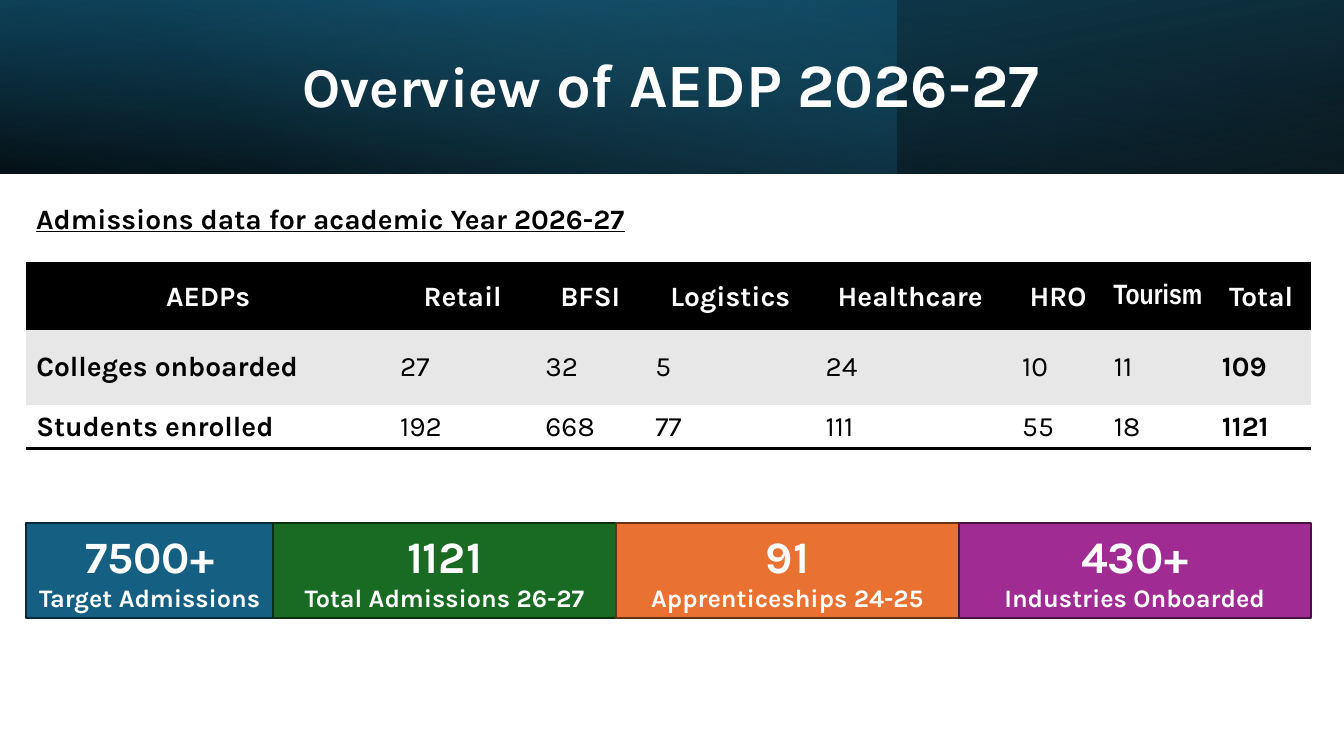
from dataclasses import dataclass, field
from itertools import accumulate

from pptx import Presentation
from pptx.dml.color import RGBColor
from pptx.enum.shapes import MSO_SHAPE
from pptx.enum.text import MSO_ANCHOR, MSO_AUTO_SIZE, PP_ALIGN
from pptx.oxml import parse_xml
from pptx.oxml.ns import nsdecls, qn
from pptx.util import Inches, Pt


@dataclass(frozen=True)
class Theme:
    """Fonts, colours and type sizes of the slide."""

    font: str = "Karla"
    narrow_font: str = "Arial Narrow"
    black: str = "000000"
    white: str = "FFFFFF"
    stripe: str = "E7E7E7"
    title_size: int = 44
    title_lead_size: int = 40
    figure_size: int = 32
    body_size: int = 20
    caption_size: int = 18
    plain_table: str = "{2D5ABB26-0587-4C30-8999-92F81FD0307C}"


@dataclass
class SlideBuilder:
    """Draws styled elements on a page, with lengths in percent of its size."""

    page: object
    width: int
    height: int
    theme: Theme = field(default_factory=Theme)

    def area(self, left, top, width, height):
        """Turn percentages into a left, top, width, height tuple."""
        sides = (self.width, self.height, self.width, self.height)
        return [round(side * share / 100) for side, share in zip(sides, (left, top, width, height))]

    def style(self, span, size, color, bold=True, font=None):
        """Format one run."""
        span.font.name = font or self.theme.font
        span.font.size = Pt(size)
        span.font.bold = bold
        span.font.color.rgb = RGBColor.from_string(color)

    def rectangle(self, area):
        """Add a rectangle without shadow."""
        box = self.page.shapes.add_shape(MSO_SHAPE.RECTANGLE, *self.area(*area))
        box.shadow.inherit = False
        return box

    def gradient(self, area, stops, angle, rotation=0, flip=False):
        """Add a rectangle with a translucent linear gradient."""
        box = self.rectangle(area)
        box.rotation = rotation
        if flip:
            box.element.spPr.find(qn("a:xfrm")).set("flipH", "1")
        box.line.fill.background()
        box.fill.background()
        marks = "".join(
            f'<a:gs pos="{place * 1000}"><a:srgbClr val="{color}">'
            f'<a:alpha val="{opacity * 1000}"/></a:srgbClr></a:gs>'
            for place, color, opacity in stops
        )
        fill = parse_xml(
            f'<a:gradFill {nsdecls("a")} rotWithShape="1"><a:gsLst>{marks}</a:gsLst>'
            f'<a:lin ang="{angle * 60000}" scaled="0"/></a:gradFill>'
        )
        properties = box.element.spPr
        properties.replace(properties.find(qn("a:noFill")), fill)

    def title(self, area, lead, rest):
        """Move the title in front of the banner and format it."""
        box = self.page.shapes.title
        self.page.shapes[-1].element.addnext(box.element)
        box.left, box.top, box.width, box.height = self.area(*area)
        frame = box.text_frame
        frame.text = lead
        frame.word_wrap = True
        frame.auto_size = MSO_AUTO_SIZE.NONE
        frame.vertical_anchor = MSO_ANCHOR.MIDDLE
        para = frame.paragraphs[0]
        para.add_run().text = rest
        para.alignment = PP_ALIGN.CENTER
        para.line_spacing = 0.9
        para.space_after = Pt(6)
        for span, size in zip(para.runs, (self.theme.title_lead_size, self.theme.title_size)):
            self.style(span, size, self.theme.white)

    def heading(self, area, text):
        """Add an underlined heading."""
        frame = self.page.shapes.add_textbox(*self.area(*area)).text_frame
        frame.text = text
        frame.word_wrap = True
        span = frame.paragraphs[0].runs[0]
        self.style(span, self.theme.body_size, self.theme.black)
        span.font.underline = True

    def border(self, cell, side):
        """Draw one black edge of a cell."""
        cell.fill._xPr.insert(0, parse_xml(
            f'<a:{side} {nsdecls("a")} w="{Pt(2)}"><a:solidFill>'
            f'<a:srgbClr val="{self.theme.black}"/></a:solidFill></a:{side}>'
        ))

    def table(self, area, weights, heights, rows, narrow):
        """Add a table with a black header and a striped body."""
        theme = self.theme
        frame = self.page.shapes.add_table(len(rows), len(weights), *self.area(*area))
        table = frame.table
        table.horz_banding = False
        next(frame.element.iter(qn("a:tableStyleId"))).text = theme.plain_table
        total_width, total_height = frame.width, frame.height
        for column, weight in zip(table.columns, weights):
            column.width = round(total_width * weight / sum(weights))
        for row, weight in zip(table.rows, heights):
            row.height = round(total_height * weight / sum(heights))
        fills = (theme.black, theme.stripe, theme.white)
        for y, values in enumerate(rows):
            for x, value in enumerate(values):
                cell = table.cell(y, x)
                cell.text = value
                cell.vertical_anchor = MSO_ANCHOR.MIDDLE
                cell.fill.solid()
                cell.fill.fore_color.rgb = RGBColor.from_string(fills[y])
                para = cell.text_frame.paragraphs[0]
                bold = y == 0 or x in (0, len(values) - 1)
                font = theme.narrow_font if value == narrow else theme.font
                color = theme.white if y == 0 else theme.black
                self.style(para.runs[0], theme.body_size, color, bold, font)
                if y == 0:
                    para.alignment = PP_ALIGN.CENTER
                    cell.margin_left = cell.margin_right = cell.margin_top = Inches(0.01)
                    cell.margin_bottom = 0
                    self.border(cell, "lnT")
                elif y == len(rows) - 1:
                    self.border(cell, "lnB")

    def tile(self, area, figure, caption, fill, line):
        """Add a coloured tile with a figure above its caption."""
        box = self.rectangle(area)
        box.fill.solid()
        box.fill.fore_color.rgb = RGBColor.from_string(fill)
        box.line.color.rgb = RGBColor.from_string(line)
        box.line.width = Pt(1.5)
        frame = box.text_frame
        frame.text = f"{figure}\v{caption}"
        frame.word_wrap = True
        frame.auto_size = MSO_AUTO_SIZE.SHAPE_TO_FIT_TEXT
        para = frame.paragraphs[0]
        para.alignment = PP_ALIGN.CENTER
        for span, size in zip(para.runs, (self.theme.figure_size, self.theme.caption_size)):
            self.style(span, size, self.theme.white)

    def tiles(self, left, top, width, height, weights, entries):
        """Lay tiles side by side in proportion to their weights."""
        unit = width / sum(weights)
        for start, weight, entry in zip(accumulate(weights, initial=0), weights, entries):
            self.tile((left + start * unit, top, weight * unit, height), *entry)


def main():
    """Build and save the slide."""
    deck = Presentation()
    deck.slide_width, deck.slide_height = Inches(13.33), Inches(7.5)
    page = deck.slides.add_slide(deck.slide_layouts[5])
    slide = SlideBuilder(page, deck.slide_width, deck.slide_height)
    left, width = 1.95, 95.57
    banner = (0, 0, 100, 22.93)

    slide.gradient(banner, [(0, "000000", 96), (100, "104862", 100)], 100, 180, True)
    slide.gradient((0, 0, 66.67, 22.93), [(0, "156082", 41), (74, "46B1E1", 0)], 140)
    slide.gradient(banner, [(0, "000000", 63), (78, "156082", 15)], 260, flip=True)
    slide.title((3.38, 3.07, 93.1, 16.93), "Overview", " of AEDP 2026-27")
    slide.table(
        (left, 34.8, width, 24.53),
        (3.61, 1.44, 1.09, 1.69, 1.95, 0.91, 1.07, 0.98),
        (0.66, 0.75, 0.43),
        (
            ("AEDPs", "Retail", "BFSI", "Logistics", "Healthcare ", "HRO", "Tourism", "Total"),
            ("Colleges onboarded", "27", "32", "5", "24", "10", "11", "109"),
            ("Students enrolled", "192", "668", "77", "111", "55", "18", "1121"),
        ),
        narrow="Tourism",
    )
    slide.heading((left, 26, 50, 5.87), "Admissions data for academic Year 2026-27")
    slide.tiles(left, 69.2, width, 12.53, (2.45, 3.4, 3.4, 3.49), (
        ("7500+", "Target Admissions", "156082", "092A39"),
        ("1121", "Total Admissions 26-27", "196B24", "0B2F10"),
        ("91", "Apprenticeships 24-25", "E97132", "663216"),
        ("430+", "Industries Onboarded", "A02B93", "461340"),
    ))
    deck.save("out.pptx")


if __name__ == "__main__":
    main()
